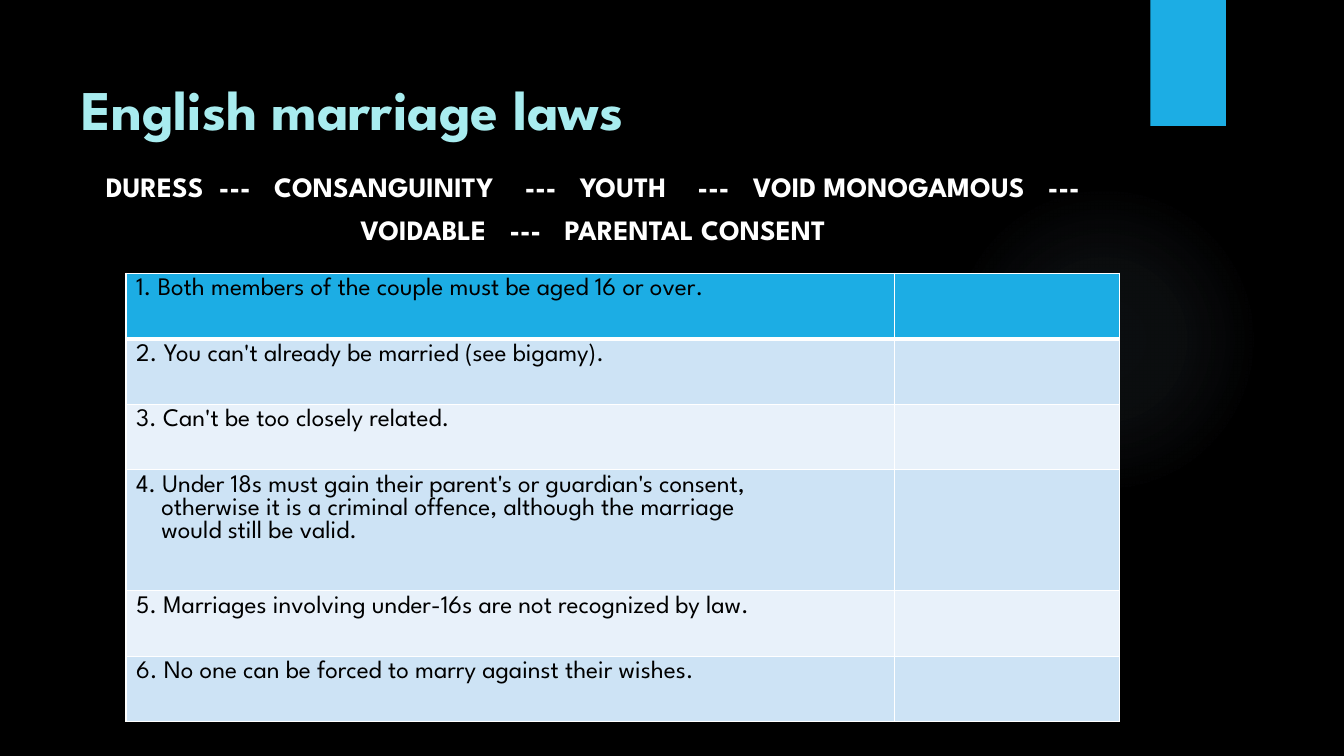
from dataclasses import dataclass
from lxml import etree
from pptx import Presentation, util as u
from pptx.dml.color import RGBColor
from pptx.enum import shapes, text
from pptx.oxml import ns

TITLE = "English marriage laws"
# Each term with the gap, in spaces, before the dashes that follow it
TERMS = [("DURESS", 2), ("CONSANGUINITY", 4), ("YOUTH", 4),
         ("VOID MONOGAMOUS", 3), ("VOIDABLE", 3), ("PARENTAL CONSENT", 0)]
DASH, AFTER = "---", 3
LAWS = [
    ["1. Both members of the couple must be aged 16 or over."],
    ["2. You can't already be married (see bigamy)."],
    ["3. Can't be too closely related."],
    ["4. Under 18s must gain their parent's or guardian's consent,",
     "otherwise it is a criminal offence, although the marriage",
     "would still be valid."],
    ["5. Marriages involving under-16s are not recognized by law."],
    ["6. No one can be forced to marry against their wishes."],
]
COLS = (7.62, 2.23)
GLOW = [(0, 7), (36, 6), (69, 0), (100, 0)]


@dataclass(frozen=True)
class Theme:
    face: str = "League Spartan"
    back: str = "000000"
    blue: str = "1CADE4"
    head: str = "A8ECEF"
    white: str = "FFFFFF"
    ink: str = "000000"
    glow: str = "A0C1D5"
    bands: tuple = ("E8F1FA", "CDE3F5")
    big: int = 40
    mid: int = 20
    small: int = 18
    space: float = 5.7


T = Theme()


def rgb(code):
    return RGBColor.from_string(code)


def style(run, size, color, bold=False):
    font = run.font
    font.name, font.size, font.bold = T.face, u.Pt(size), bold
    font.color.rgb = rgb(color)


def place(shape, *box):
    shape.left, shape.top, shape.width, shape.height = map(u.Inches, box)


def node(up, tag, **attrs):
    item = etree.SubElement(up, ns.qn("a:" + tag))
    for key, val in attrs.items():
        item.set(key, str(val))
    return item


def decor(slide, kind, *box):
    """Add a plain blue shape behind the placeholders."""
    shape = slide.shapes.add_shape(kind, *map(u.Inches, box))
    shape.shadow.inherit = False
    shape.fill.solid()
    shape.fill.fore_color.rgb = rgb(T.blue)
    shape.line.fill.background()
    slide.shapes._spTree.insert(2, shape._element)
    return shape


def fade(shape):
    """Swap the solid fill for a soft round glow."""
    props = shape._element.spPr
    old = props.find(ns.qn("a:solidFill"))
    grad = node(props, "gradFill", rotWithShape=1)
    stops = node(grad, "gsLst")
    for pos, alpha in GLOW:
        stop = node(stops, "gs", pos=pos * 1000)
        node(node(stop, "srgbClr", val=T.glow), "alpha", val=alpha * 1000)
    node(node(grad, "path", path="circle"), "fillToRect",
         l=50000, t=50000, r=50000, b=50000)
    props.replace(old, grad)


def add_gap(para, count):
    """Add one space, tracked out to the width of several."""
    run = para.add_run()
    run.text = " "
    style(run, T.mid, T.white, True)
    run.font._element.set("spc", str(round((count - 1) * T.space * 100)))


def add_word(para, word):
    run = para.add_run()
    run.text = word
    style(run, T.mid, T.white, True)


def fill_body(body):
    place(body, 0.77, 1.54, 10.22, 5.3)
    body.text_frame.vertical_anchor = text.MSO_ANCHOR.TOP
    para = body.text_frame.paragraphs[0]
    props = para._p.get_or_add_pPr()
    props.set("marL", "0")
    props.set("indent", "0")
    node(props, "buNone")
    para.alignment = text.PP_ALIGN.CENTER
    para.line_spacing = 1.28
    para.space_before = u.Pt(0)
    for word, gap in TERMS:
        add_word(para, word)
        if gap:
            add_gap(para, gap)
            add_word(para, DASH)
            add_gap(para, AFTER)


def edge(cell, low):
    props = cell._tc.get_or_add_tcPr()
    for spot, side in enumerate("LRTB"):
        width = low if side == "B" else 1
        line = etree.Element(ns.qn("a:ln" + side), w=str(u.Pt(width)))
        node(node(line, "solidFill"), "srgbClr", val=T.white)
        props.insert(spot, line)


def add_laws(slide):
    frame = slide.shapes.add_table(len(LAWS), len(COLS), u.Inches(1.25),
                                   u.Inches(2.71), u.Inches(sum(COLS)), u.Inches(4.45))
    table = frame.table
    for col, width in zip(table.columns, COLS):
        col.width = u.Inches(width)
    for i, (row, lines) in enumerate(zip(table.rows, LAWS)):
        row.height = u.Inches(1.2 if len(lines) > 1 else 0.65)
        for cell in row.cells:
            cell.fill.solid()
            cell.fill.fore_color.rgb = rgb(T.bands[i % 2] if i else T.blue)
            edge(cell, 1 if i else 3)
        box = row.cells[0].text_frame
        box.text = "\n".join(lines)
        for j, para in enumerate(box.paragraphs):
            if j:
                para._p.get_or_add_pPr().set("marL", str(u.Inches(0.25)))
            style(para.runs[0], T.small, T.ink)


def main():
    deck = Presentation()
    deck.slide_width, deck.slide_height = u.Inches(13.33), u.Inches(7.5)
    slide = deck.slides.add_slide(deck.slide_layouts[1])
    slide.background.fill.solid()
    slide.background.fill.fore_color.rgb = rgb(T.back)

    decor(slide, shapes.MSO_SHAPE.RECTANGLE, 11.41, 0, 0.75, 1.25)
    fade(decor(slide, shapes.MSO_SHAPE.OVAL, 9.41, 1.83, 3.08, 3.08))

    title, body = slide.placeholders
    place(title, 0.71, 0.5, 10.29, 1.53)
    title.text_frame.text = TITLE
    title.text_frame.vertical_anchor = text.MSO_ANCHOR.TOP
    para = title.text_frame.paragraphs[0]
    para.alignment = text.PP_ALIGN.LEFT
    para.line_spacing = 1.28
    style(para.runs[0], T.big, T.head, True)

    fill_body(body)
    add_laws(slide)
    deck.save("out.pptx")


if __name__ == "__main__":
    main()
